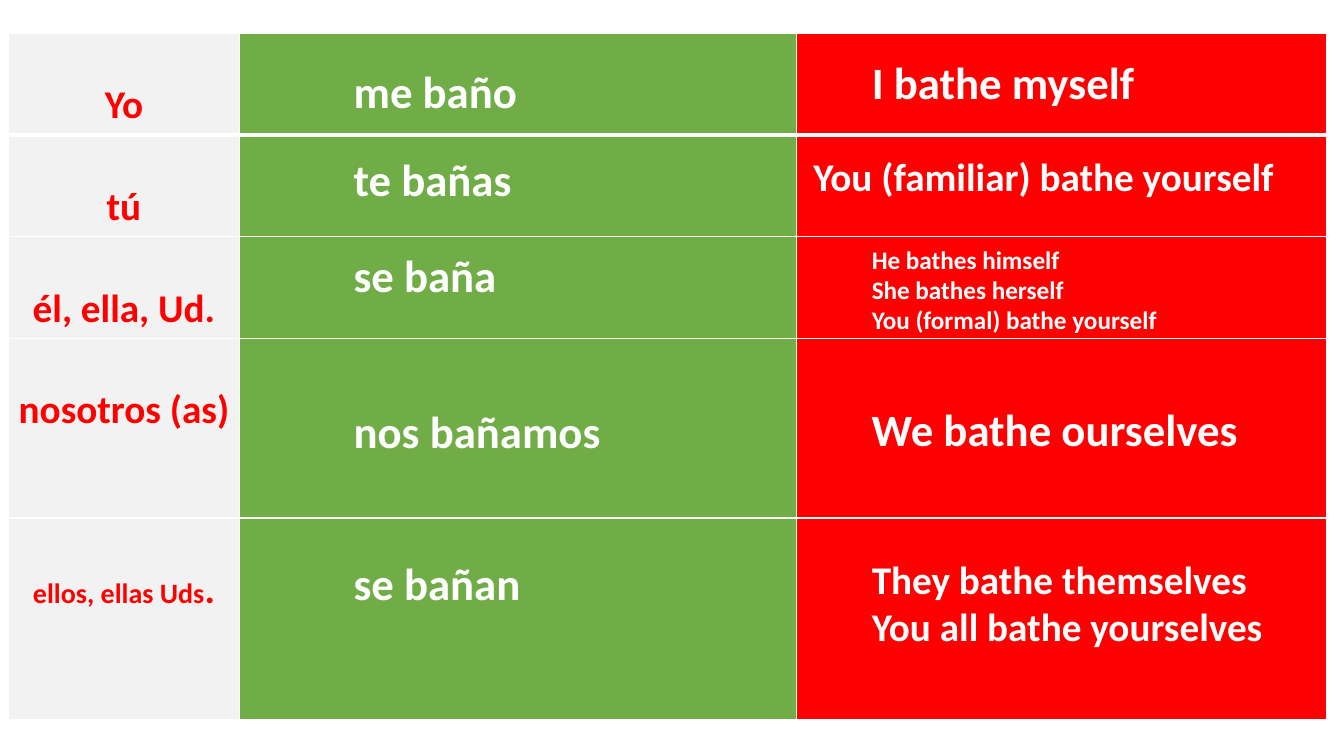
from dataclasses import dataclass

from lxml import etree
from pptx import Presentation
from pptx.dml.color import RGBColor
from pptx.enum.text import MSO_AUTO_SIZE, PP_ALIGN
from pptx.oxml.ns import qn
from pptx.util import Pt

FIT_SHAPE = MSO_AUTO_SIZE.SHAPE_TO_FIT_TEXT
CENTER = PP_ALIGN.CENTER

FONT = "Calibri"
WHITE, RED, GREEN, GRAY = "FFFFFF", "FF0000", "70AD47", "F2F2F2"

COLUMN_WIDTHS = (165.6, 397.44, 378.72)
COLUMN_FILLS = (GRAY, GREEN, RED)
ROW_HEIGHTS = (72.72, 72.72, 72.72, 128.16, 144)
TABLE_LEFT, TABLE_TOP = 5.76, 23.76
SPANISH_LEFT, ENGLISH_LEFT = 245.52, 615.6


@dataclass
class Label:
    lines: tuple[str, ...]
    left: float
    top: float
    width: float
    height: float
    size: float = 32


# Each pronoun is a list of (text, size) spans
PRONOUNS = (
    [("Yo", 28)],
    [("tú", 28)],
    [("él, ella, Ud.", 28)],
    [("nosotros (as)", 28)],
    [("ellos, ellas Uds", 20), (".", 28)],
)

LABELS = (
    Label(("me baño",), SPANISH_LEFT, 41.76, 172, 47.5),
    Label(("I bathe myself",), ENGLISH_LEFT, 35.28, 243.4, 46),
    Label(("te bañas",), SPANISH_LEFT, 105.12, 172, 47.5),
    Label(("You (familiar) bathe yourself",), 573.84, 105.12, 374.4, 41, 28),
    Label(("se baña",), SPANISH_LEFT, 173.52, 172, 47.5),
    Label(("He bathes himself", "She bathes herself", "You (formal) bathe yourself"),
          ENGLISH_LEFT, 170.64, 287.3, 72.7, 18),
    Label(("nos bañamos",), SPANISH_LEFT, 285.12, 212.4, 46),
    Label(("We bathe ourselves",), ENGLISH_LEFT, 283.68, 295.2, 46),
    Label(("se bañan",), SPANISH_LEFT, 393.12, 172, 47.5),
    Label(("They bathe themselves", "You all bathe yourselves"),
          ENGLISH_LEFT, 393.12, 331.9, 74.9, 28),
)


def color(value: str) -> RGBColor:
    return RGBColor.from_string(value)


def add_span(para, text: str, *, size: float, ink: str = WHITE, bold: bool = True) -> None:
    span = para.add_run()
    span.text = text
    span.font.name = FONT
    span.font.size = Pt(size)
    span.font.bold = bold
    span.font.color.rgb = color(ink)


def set_borders(cell, top: float, bottom: float) -> None:
    properties = cell._tc.get_or_add_tcPr()
    for side, width in (("L", 1), ("R", 1), ("T", top), ("B", bottom)):
        line = etree.SubElement(properties, qn(f"a:ln{side}"), w=str(Pt(width)))
        fill = etree.SubElement(line, qn("a:solidFill"))
        etree.SubElement(fill, qn("a:srgbClr"), val=WHITE)


def add_pronoun_table(page) -> None:
    table = page.shapes.add_table(
        len(ROW_HEIGHTS), len(COLUMN_WIDTHS), Pt(TABLE_LEFT), Pt(TABLE_TOP),
        Pt(sum(COLUMN_WIDTHS)), Pt(sum(ROW_HEIGHTS))).table
    for column, width in zip(table.columns, COLUMN_WIDTHS):
        column.width = Pt(width)
    for index, (row, height) in enumerate(zip(table.rows, ROW_HEIGHTS)):
        row.height = Pt(height)
        for cell, fill in zip(row.cells, COLUMN_FILLS):
            # The first row is set off by a thicker rule
            set_borders(cell, top=3 if index == 1 else 1, bottom=3 if index == 0 else 1)
            cell.fill.solid()
            cell.fill.fore_color.rgb = color(fill)
        pronoun = row.cells[0]
        pronoun.margin_left = pronoun.margin_right = Pt(5)
        pronoun.margin_top = pronoun.margin_bottom = Pt(0)
        para = pronoun.text_frame.paragraphs[0]
        para.alignment = CENTER
        para.line_spacing = 2.0
        for text, size in PRONOUNS[index]:
            add_span(para, text, size=size, ink=RED)


def add_label(page, label: Label) -> None:
    box = page.shapes.add_textbox(
        Pt(label.left), Pt(label.top), Pt(label.width), Pt(label.height))
    frame = box.text_frame
    frame.word_wrap = True
    frame.auto_size = FIT_SHAPE
    for index, line in enumerate(label.lines):
        para = frame.add_paragraph() if index else frame.paragraphs[0]
        add_span(para, line, size=label.size)


def main() -> None:
    deck = Presentation()
    deck.slide_width, deck.slide_height = Pt(960), Pt(540)
    page = deck.slides.add_slide(deck.slide_layouts[6])

    # Pronouns on colored columns
    add_pronoun_table(page)

    # Spanish forms and English meanings
    for label in LABELS:
        add_label(page, label)

    deck.save("out.pptx")


if __name__ == "__main__":
    main()
